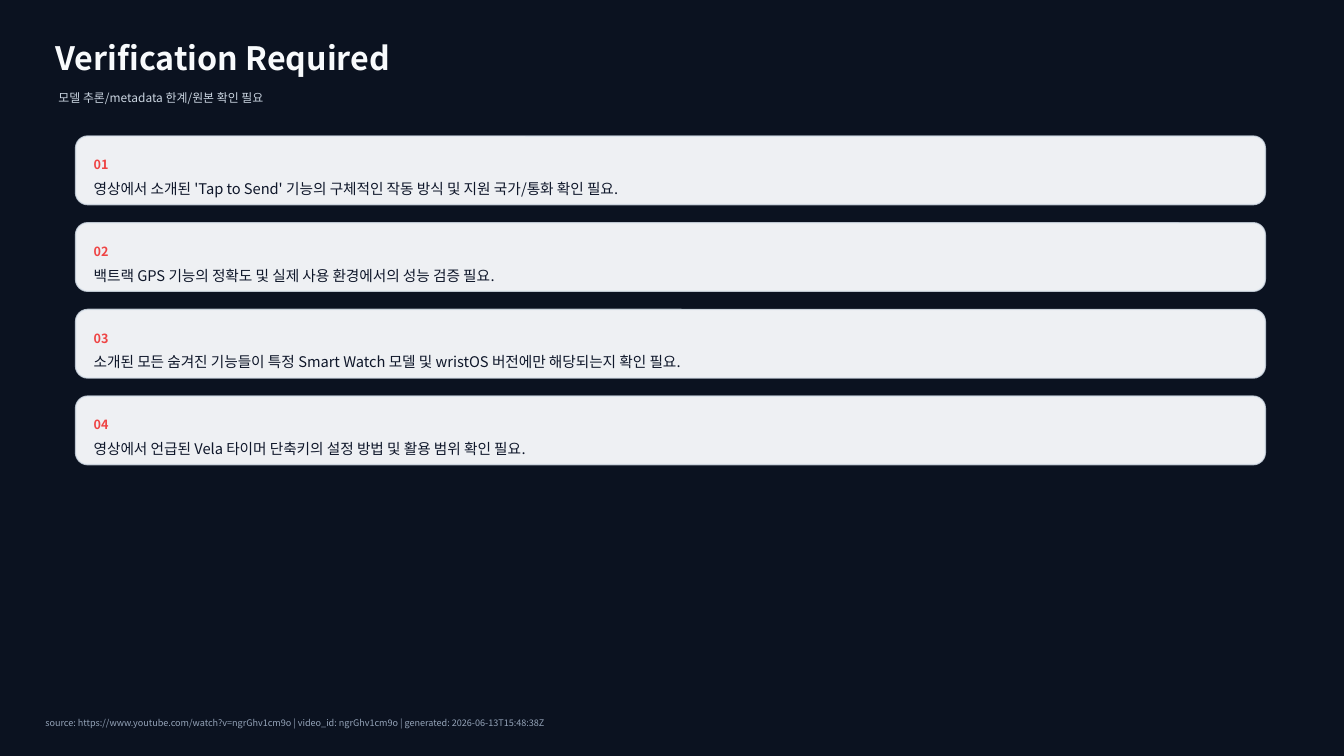
"""Build the verification checklist slide."""
import pptx
import pptx.dml.color
import pptx.enum.shapes
import pptx.enum.text
import pptx.oxml
import pptx.oxml.ns
import pptx.util

RGBColor = pptx.dml.color.RGBColor
EMU_PER_PX = 9144
FONT = "Noto Sans CJK KR"

NAVY = RGBColor(0x0B, 0x12, 0x20)
WHITE = RGBColor(0xF8, 0xFA, 0xFC)
SILVER = RGBColor(0xCB, 0xD5, 0xE1)
BORDER = RGBColor(0xD7, 0xE0, 0xEA)
RED = RGBColor(0xEF, 0x44, 0x44)
INK = RGBColor(0x0F, 0x17, 0x2A)
SLATE = RGBColor(0x94, 0xA3, 0xB8)

CARD_LEFT, CARD_TOP, CARD_WIDTH, CARD_HEIGHT = 75, 135, 1180, 68
CARD_STEP = 86
CARD_PADDING = 18

CHECKS = [
    "영상에서 소개된 'Tap to Send' 기능의 구체적인 작동 방식 및 지원 국가/통화 확인 필요.",
    "백트랙 GPS 기능의 정확도 및 실제 사용 환경에서의 성능 검증 필요.",
    "소개된 모든 숨겨진 기능들이 특정 Smart Watch 모델 및 wristOS 버전에만 해당되는지 확인 필요.",
    "영상에서 언급된 Vela 타이머 단축키의 설정 방법 및 활용 범위 확인 필요.",
]
SOURCE = (
    "source: https://www.youtube.com/watch?v=ngrGhv1cm9o"
    " | video_id: ngrGhv1cm9o | generated: 2026-06-13T15:48:38Z"
)


def px(*lengths):
    """Turn pixel lengths into EMU."""
    return [pptx.util.Emu(length * EMU_PER_PX) for length in lengths]


def set_opacity(fill_element, percent):
    """Make a solid fill partly transparent."""
    color = fill_element.find(".//" + pptx.oxml.ns.qn("a:srgbClr"))
    alpha = color.makeelement(pptx.oxml.ns.qn("a:alpha"), {"val": str(percent * 1000)})
    color.append(alpha)


def add_text(slide, box, text, size, color, bold=False):
    """Add a one-line text box without margins, centred vertically."""
    frame = slide.shapes.add_textbox(*px(*box)).text_frame
    frame.word_wrap = True
    frame.vertical_anchor = pptx.enum.text.MSO_ANCHOR.MIDDLE
    frame.margin_left = frame.margin_top = frame.margin_right = frame.margin_bottom = 0
    run = frame.paragraphs[0].add_run()
    run.text = text
    run.font.size = pptx.util.Pt(size)
    run.font.bold = bold
    run.font.color.rgb = color
    run.font.name = FONT
    properties = run.font._element
    east_asian = properties.makeelement(pptx.oxml.ns.qn("a:ea"), {"typeface": FONT})
    properties.append(east_asian)


def add_card(slide, index, text):
    """Add a numbered card at its place in the list."""
    top = CARD_TOP + index * CARD_STEP
    shape = slide.shapes.add_shape(
        pptx.enum.shapes.MSO_SHAPE.ROUNDED_RECTANGLE,
        *px(CARD_LEFT, top, CARD_WIDTH, CARD_HEIGHT),
    )
    shape.adjustments[0] = 0.176
    shape.shadow.inherit = False
    shape.fill.solid()
    shape.fill.fore_color.rgb = WHITE
    shape.line.color.rgb = BORDER
    shape.line.width = pptx.util.Pt(1)
    properties = shape._element.spPr
    set_opacity(properties.find(pptx.oxml.ns.qn("a:solidFill")), 96)
    set_opacity(properties.find(pptx.oxml.ns.qn("a:ln")), 80)

    left = CARD_LEFT + CARD_PADDING
    width = CARD_WIDTH - 2 * CARD_PADDING
    add_text(slide, (left, top + 16, width, 25), f"{index + 1:02}", 9, RED, bold=True)
    add_text(slide, (left, top + 50, width, 4), text, 10.5, INK)


def main():
    """Build and save the slide."""
    presentation = pptx.Presentation()
    presentation.slide_width, presentation.slide_height = px(1333, 750)
    slide = presentation.slides.add_slide(presentation.slide_layouts[6])
    slide.background.fill.solid()
    slide.background.fill.fore_color.rgb = NAVY

    add_text(slide, (55, 35, 1200, 45), "Verification Required", 23, WHITE, bold=True)
    add_text(slide, (58, 83, 1150, 28), "모델 추론/metadata 한계/원본 확인 필요", 8.5, SILVER)
    for index, text in enumerate(CHECKS):
        add_card(slide, index, text)
    add_text(slide, (45, 705, 1240, 25), SOURCE, 6.5, SLATE)
    presentation.save("out.pptx")


if __name__ == "__main__":
    main()
